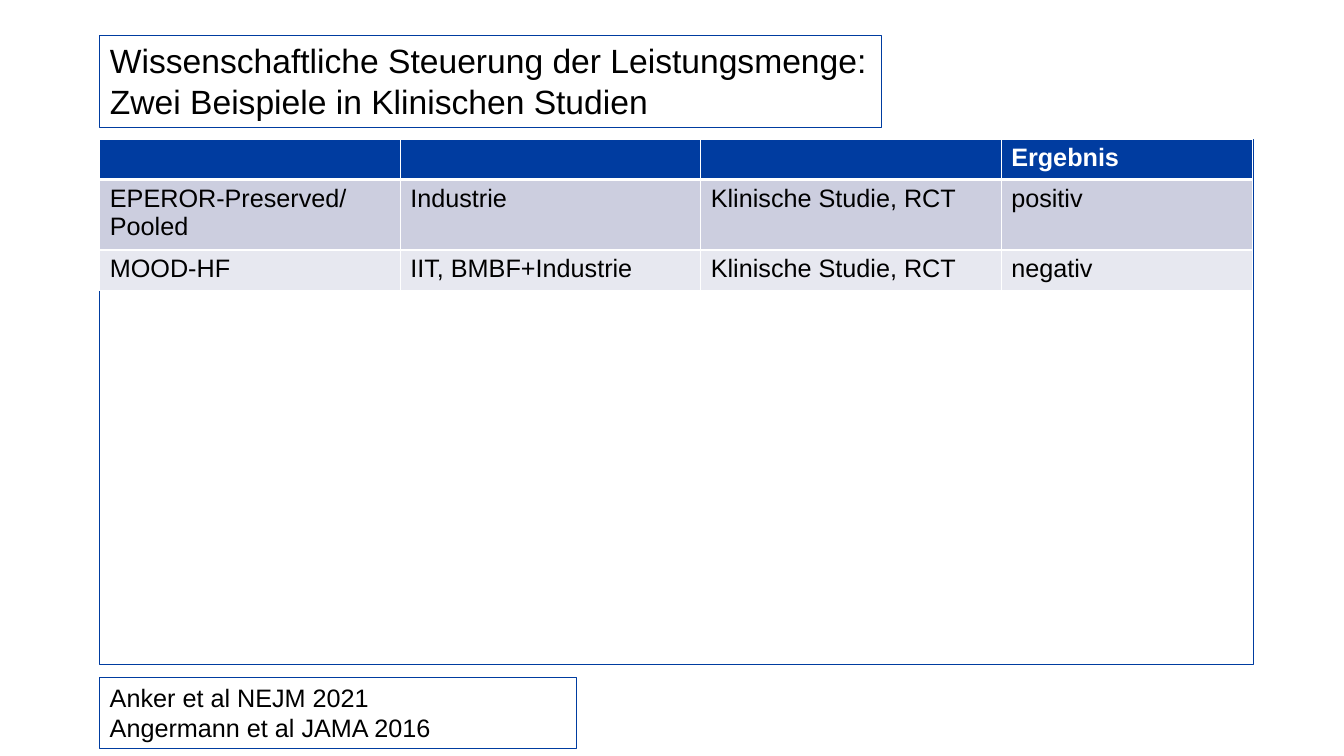
from lxml import etree
from pptx import Presentation
from pptx import util as u
from pptx.dml import color
from pptx.enum import shapes, text
from pptx.oxml import ns

BLUE, BLACK, WHITE = "003CA0", "000000", "FFFFFF"
LEFT, TABLE_TOP, WIDTH = 0.99, 1.38, 11.44


def rgb(value):
    return color.RGBColor.from_string(value)


class StudySlide:
    font = "Arial"
    row_fills = [BLUE, "CCCEDF", "E7E8F0"]

    def __init__(self, presentation):
        self.slide = presentation.slides.add_slide(presentation.slide_layouts[5])

    def format_paragraph(self, paragraph, size, ink=BLACK, bold=False):
        paragraph.alignment = text.PP_ALIGN.LEFT
        paragraph.line_spacing = 1.0
        paragraph.space_before = u.Pt(0)
        paragraph.font.name = self.font
        paragraph.font.size = u.Pt(size)
        paragraph.font.bold = bold
        paragraph.font.color.rgb = rgb(ink)

    def outline(self, shape):
        shape.fill.background()
        shape.line.color.rgb = rgb(BLUE)
        shape.line.width = u.Pt(0.75)

    def fill_text(self, shape, content, size):
        frame = shape.text_frame
        frame.text = content
        frame.word_wrap = True
        frame.auto_size = text.MSO_AUTO_SIZE.SHAPE_TO_FIT_TEXT
        frame.vertical_anchor = text.MSO_ANCHOR.TOP
        for paragraph in frame.paragraphs:
            self.format_paragraph(paragraph, size)

    def title(self, content, left, top, width, height):
        shape = self.slide.shapes.title
        shape.left, shape.top = u.Inches(left), u.Inches(top)
        shape.width, shape.height = u.Inches(width), u.Inches(height)
        self.outline(shape)
        self.fill_text(shape, content, 24)

    def box(self, left, top, width, height, content=None):
        shape = self.slide.shapes.add_shape(
            shapes.MSO_SHAPE.RECTANGLE,
            u.Inches(left), u.Inches(top), u.Inches(width), u.Inches(height))
        shape.shadow.inherit = False
        self.outline(shape)
        if content:
            self.fill_text(shape, content, 18)

    def border(self, cell, side, points):
        properties = cell._tc.get_or_add_tcPr()
        line = etree.SubElement(properties, ns.qn(f"a:ln{side}"), w=str(u.Pt(points)))
        fill = etree.SubElement(line, ns.qn("a:solidFill"))
        etree.SubElement(fill, ns.qn("a:srgbClr"), val=WHITE)

    def table(self, rows, left, top, widths, heights):
        table = self.slide.shapes.add_table(
            len(rows), len(widths), u.Inches(left), u.Inches(top),
            u.Inches(sum(widths)), u.Inches(sum(heights))).table
        for column, width in zip(table.columns, widths):
            column.width = u.Inches(width)
        for index, values in enumerate(rows):
            table.rows[index].height = u.Inches(heights[index])
            header = index == 0
            for cell, value in zip(table.rows[index].cells, values):
                cell.text = value
                self.format_paragraph(cell.text_frame.paragraphs[0], 18,
                                      WHITE if header else BLACK, header)
                for side in "LRTB":
                    thick = (header and side == "B") or (index == 1 and side == "T")
                    self.border(cell, side, 3 if thick else 1)
                cell.fill.solid()
                cell.fill.fore_color.rgb = rgb(self.row_fills[index])


def main():
    presentation = Presentation()
    presentation.slide_width = u.Inches(13.33)
    presentation.slide_height = u.Inches(7.5)
    slide = StudySlide(presentation)
    slide.title("Wissenschaftliche Steuerung der Leistungsmenge:\v"
                "Zwei Beispiele in Klinischen Studien", LEFT, 0.35, 7.75, 0.91)
    slide.box(LEFT, TABLE_TOP, WIDTH, 5.21)
    slide.box(LEFT, 6.72, 4.73, 0.71,
              "Anker et al NEJM 2021\nAngermann et al JAMA 2016")
    slide.table([
        ["", "", "", "Ergebnis"],
        ["EPEROR-Preserved/ Pooled", "Industrie", "Klinische Studie, RCT", "positiv"],
        ["MOOD-HF", "IIT, BMBF+Industrie", "Klinische Studie, RCT", "negativ"],
    ], LEFT, TABLE_TOP, [2.98, 2.98, 2.98, 2.49], [0.4, 0.7, 0.4])
    presentation.save("out.pptx")


if __name__ == "__main__":
    main()
